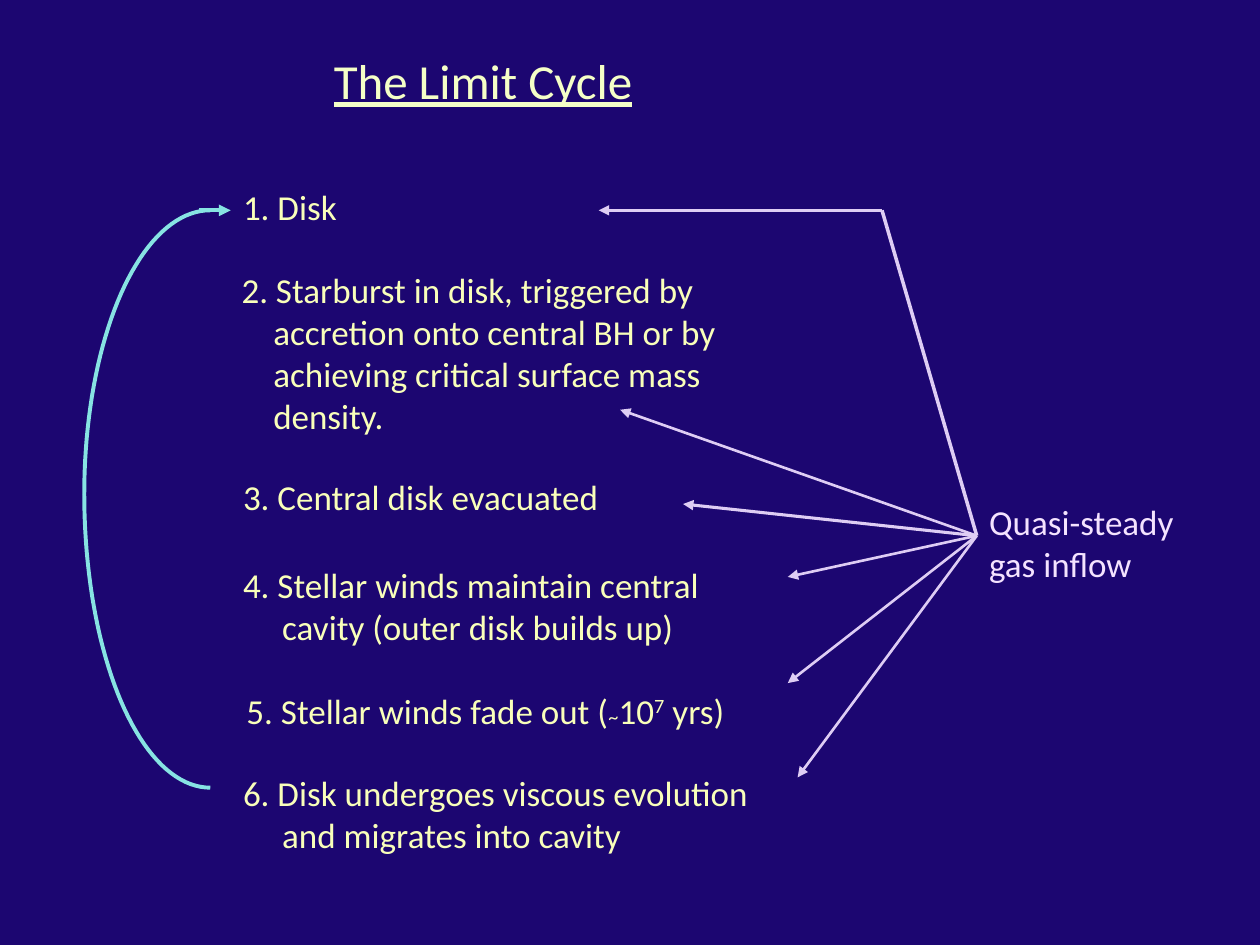
from dataclasses import dataclass
from math import cos, pi, sin

from lxml import etree
from pptx import Presentation
from pptx.dml.color import RGBColor
from pptx.enum.shapes import MSO_CONNECTOR
from pptx.enum.text import MSO_ANCHOR, MSO_AUTO_SIZE
from pptx.oxml.ns import qn
from pptx.util import Cm, Pt

STRAIGHT = MSO_CONNECTOR.STRAIGHT
TOP = MSO_ANCHOR.TOP
NO_AUTOSIZE = MSO_AUTO_SIZE.NONE


@dataclass(frozen=True)
class Theme:
    background: str = "1C0671"
    title: str = "F5FFC7"
    step: str = "F9FFBA"
    inflow: str = "F4E3FF"
    arrow: str = "DECDF4"
    cycle: str = "87E3E3"
    font: str = "Calibri"
    title_size: int = 28
    body_size: int = 20
    cycle_width: float = 2.25


@dataclass(frozen=True)
class Label:
    """Text box in cm; each run is (text, baseline in percent)."""
    left: float
    top: float
    width: float
    height: float
    runs: tuple[tuple[str, int], ...]
    hang: float = 0


@dataclass(frozen=True)
class Line:
    """Straight line in cm, with its weight in points."""
    start: tuple[float, float]
    end: tuple[float, float]
    weight: float = 1.5
    arrow: bool = True


THEME = Theme()

TITLE = Label(6.48, 0.89, 7.49, 1.45, (("The Limit Cycle", 0),))
INFLOW = Label(19.69, 9.96, 5, 1.96, (("Quasi-steady\vgas inflow", 0),))
STEPS = (
    Label(4.65, 3.61, 2.57, 1.09, (("1. Disk", 0),)),
    Label(4.62, 5.28, 12.12, 3.63, ((
        "2. Starburst in disk, triggered by\v"
        "accretion onto central BH or by\v"
        "achieving critical surface mass\v"
        "density.", 0),), hang=0.64),
    Label(4.65, 9.47, 8.74, 1.09, (("3. Central disk evacuated", 0),)),
    Label(4.65, 11.23, 11.1, 2.97, ((
        "4. Stellar winds maintain central\v"
        "cavity (outer disk builds up)", 0),), hang=0.79),
    Label(4.72, 13.77, 11.79, 2.11, (
        ("5. Stellar winds fade out (", 0), ("~", -2), ("10", 0),
        ("7", 30), (" yrs)", 0))),
    Label(4.65, 15.42, 11.94, 1.96, ((
        "6. Disk undergoes viscous evolution\v"
        "and migrates into cavity", 0),), hang=0.79),
)

# Inflow arrows fan out from one source; the first turns a corner
SOURCE = (19.69, 10.8)
CORNER = (17.78, 4.24)
INFLOW_LINES = (
    Line(SOURCE, CORNER, 2, arrow=False),
    Line(CORNER, (12.07, 4.24)),
    Line(SOURCE, (12.5, 8.26)),
    Line(SOURCE, (13.77, 10.16), 1.75),
    Line(SOURCE, (15.88, 11.63)),
    Line(SOURCE, (15.88, 13.77)),
    Line(SOURCE, (16.08, 15.67)),
)

# Cycle curve: two quarter ellipses that meet at the far left
ARC_CENTRE = (4.24, 9.96)
ARC_RX = 2.54
ARC_RISES = (5.92, -5.72)
ARC_STEPS = 40
CYCLE_TIP = Line((4.01, 4.24), (4.65, 4.24), THEME.cycle_width)


def rgb(color: str) -> RGBColor:
    return RGBColor.from_string(color)


def draw_label(s, label: Label, color: str, size: int,
               underline: bool = False) -> None:
    box = (label.left, label.top, label.width, label.height)
    tf = s.shapes.add_textbox(*map(Cm, box)).text_frame
    frame_format = {"word_wrap": True, "auto_size": NO_AUTOSIZE,
                    "vertical_anchor": TOP}
    for name, value in frame_format.items():
        setattr(tf, name, value)
    p = tf.paragraphs[0]
    if label.hang:
        pPr = p._p.get_or_add_pPr()
        pPr.set("marL", str(Cm(label.hang)))
        pPr.set("indent", str(-Cm(label.hang)))
    run_format = {"name": THEME.font, "size": Pt(size), "underline": underline}
    for text, baseline in label.runs:
        for i, part in enumerate(text.split("\v")):
            if i:
                p.add_line_break()
            r = p.add_run()
            r.text = part
            for name, value in run_format.items():
                setattr(r.font, name, value)
            r.font.color.rgb = rgb(color)
            if baseline:
                r._r.get_or_add_rPr().set("baseline", str(baseline * 1000))


def draw_line(s, line: Line, color: str) -> None:
    sp = s.shapes.add_connector(STRAIGHT, *map(Cm, line.start + line.end))
    sp.line.color.rgb = rgb(color)
    sp.line.width = Pt(line.weight)
    if line.arrow:
        etree.SubElement(sp.line._get_or_add_ln(), qn("a:tailEnd"),
                         type="triangle")
    etree.SubElement(sp._element.spPr, qn("a:effectLst"))


def draw_quarter(s, rise: float) -> None:
    """Curve from the foot or head of the cycle to its far left point."""
    cx, cy = ARC_CENTRE
    angles = [pi / 2 * i / ARC_STEPS for i in range(ARC_STEPS + 1)]
    points = [(Cm(cx - ARC_RX * sin(a)), Cm(cy + rise * cos(a)))
              for a in angles]
    builder = s.shapes.build_freeform(*points[0])
    builder.add_line_segments(points[1:], close=False)
    sp = builder.convert_to_shape()
    sp.shadow.inherit = False
    sp.fill.background()
    sp.line.color.rgb = rgb(THEME.cycle)
    sp.line.width = Pt(THEME.cycle_width)


def main() -> None:
    prs = Presentation()
    prs.slide_width, prs.slide_height = Cm(25.4), Cm(19.05)
    s = prs.slides.add_slide(prs.slide_layouts[6])
    s.background.fill.solid()
    s.background.fill.fore_color.rgb = rgb(THEME.background)

    # Return path of the cycle
    for rise in ARC_RISES:
        draw_quarter(s, rise)
    draw_line(s, CYCLE_TIP, THEME.cycle)

    # Gas inflow
    for line in INFLOW_LINES:
        draw_line(s, line, THEME.arrow)
    draw_label(s, INFLOW, THEME.inflow, THEME.body_size)

    # Title and steps
    draw_label(s, TITLE, THEME.title, THEME.title_size, underline=True)
    for step in STEPS:
        draw_label(s, step, THEME.step, THEME.body_size)

    prs.save("out.pptx")


if __name__ == "__main__":
    main()
